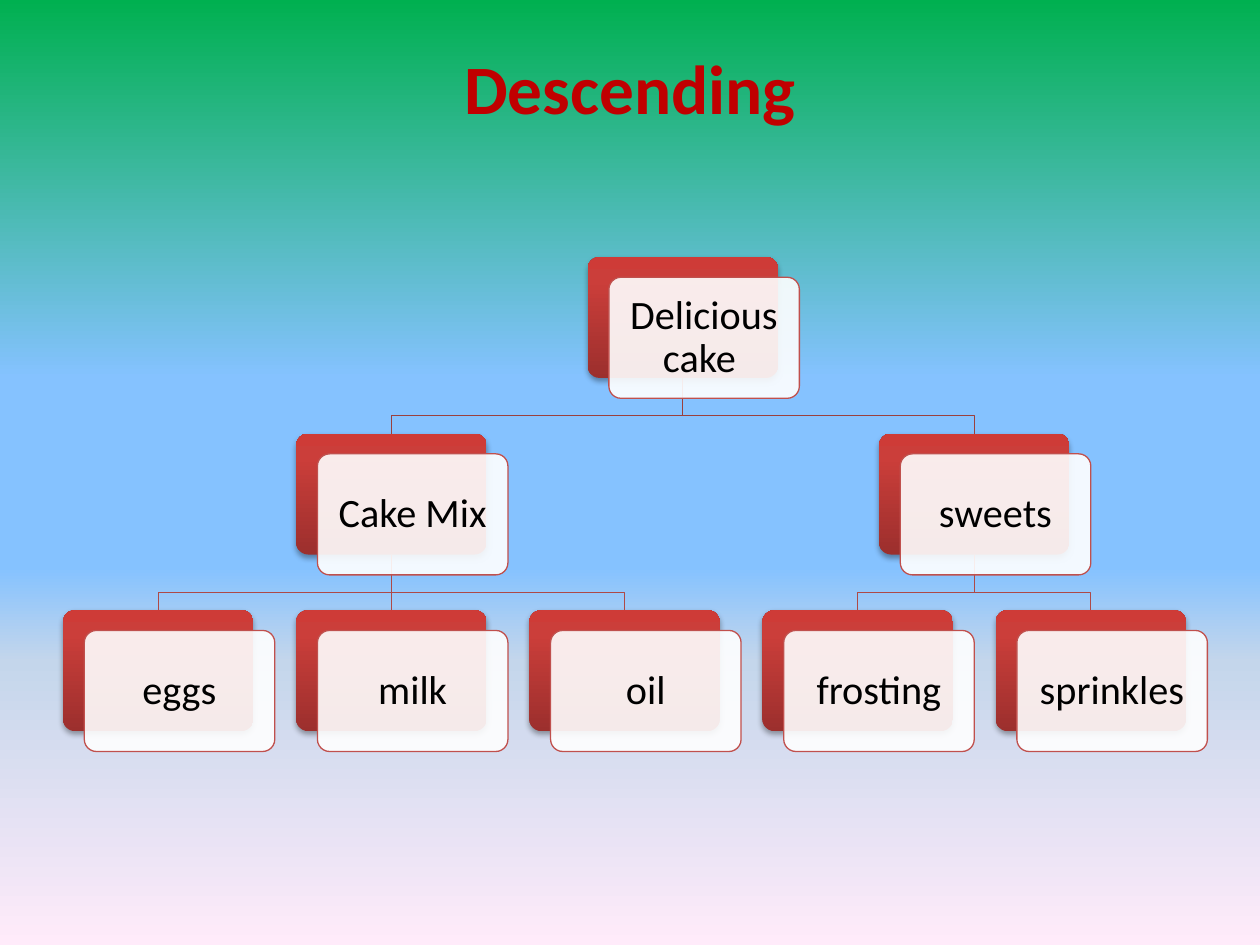
import pptx
import pptx.util
import pptx.dml.color
import pptx.enum.shapes
import pptx.enum.text
import pptx.oxml
import pptx.oxml.ns
from pptx.util import Cm

CARD_W, CARD_H = Cm(3.84), Cm(2.44)
LEFT, TOP = Cm(1.27), Cm(5.18)
COLUMN_STEP, LEVEL_STEP = Cm(4.7), Cm(3.56)
FRONT_DX, FRONT_DY = Cm(0.43), Cm(0.41)
BEND = Cm(0.76)

SKY = [(0, "00B050"), (40, "85C2FF"), (60, "85C2FF"), (70, "C4D6EB"), (100, "FFEBFA")]
RED = [(0, "9C2F2D"), (80, "CB3E3A"), (100, "CE3B37")]
LINK_COLORS = ["9A403E", "AE4946"]

# name: (text, column, level, parent)
NODES = {
    "cake": ("Delicious cake ", 2.25, 0, None),
    "mix": ("Cake Mix ", 1, 1, "cake"),
    "sweets": ("sweets", 3.5, 1, "cake"),
    "eggs": ("eggs", 0, 2, "mix"),
    "milk": ("milk", 1, 2, "mix"),
    "oil": ("oil", 2, 2, "mix"),
    "frosting": ("frosting", 3, 2, "sweets"),
    "sprinkles": ("sprinkles", 4, 2, "sweets"),
}


def rgb(value):
    """Return the colour for a hex string."""
    return pptx.dml.color.RGBColor.from_string(value)


def add_xml(parent, tag, **attrs):
    """Append a DrawingML element to a parent and return it."""
    child = pptx.oxml.parse_xml(f"<a:{tag} {pptx.oxml.ns.nsdecls('a')}/>")
    for name, value in attrs.items():
        child.set(name, str(value))
    parent.append(child)
    return child


def find(element, tag):
    """Return the first descendant with the given prefixed tag."""
    return element.find(".//" + pptx.oxml.ns.qn(tag))


def set_gradient(fill, element, stops, angle):
    """Fill with a linear gradient of any number of stops."""
    fill.gradient()
    fill.gradient_angle = angle
    stop_list = find(element, "a:gsLst")
    for old in list(stop_list):
        stop_list.remove(old)
    for position, color in stops:
        stop = add_xml(stop_list, "gs", pos=position * 1000)
        add_xml(stop, "srgbClr", val=color)


def format_text(p, size, color, bold=False):
    """Centre a paragraph and format its runs."""
    p.alignment = pptx.enum.text.PP_ALIGN.CENTER
    for r in p.runs:
        r.font.name = "Calibri"
        r.font.size = pptx.util.Pt(size)
        r.font.bold = bold
        r.font.color.rgb = rgb(color)


def set_title(s, text):
    """Place and format the slide title."""
    sp = s.shapes.title
    sp.left, sp.top, sp.width, sp.height = Cm(1.27), Cm(0.76), Cm(22.86), Cm(1.98)
    tf = sp.text_frame
    tf.text = text
    tf.vertical_anchor = pptx.enum.text.MSO_ANCHOR.MIDDLE
    format_text(tf.paragraphs[0], 39.6, "C00000", True)


def add_card(s, left, top):
    """Add a rounded card without shadow."""
    kind = pptx.enum.shapes.MSO_SHAPE.ROUNDED_RECTANGLE
    sp = s.shapes.add_shape(kind, left, top, CARD_W, CARD_H)
    sp.adjustments[0] = 0.1
    sp.shadow.inherit = False
    return sp


def add_back(s, column, level):
    """Add the red card with its soft shadow."""
    sp = add_card(s, LEFT + int(column * COLUMN_STEP), TOP + level * LEVEL_STEP)
    set_gradient(sp.fill, sp.element, RED, 90)
    sp.line.fill.background()
    shadow = add_xml(find(sp.element, "a:effectLst"), "outerShdw", blurRad=40000,
                     dist=23000, dir=5400000, rotWithShape=0)
    add_xml(add_xml(shadow, "srgbClr", val="000000"), "alpha", val=35000)
    return sp


def add_front(s, back, text):
    """Add the translucent white label card over a red card."""
    sp = add_card(s, back.left + FRONT_DX, back.top + FRONT_DY)
    sp.fill.solid()
    sp.fill.fore_color.rgb = rgb("FFFFFF")
    add_xml(find(sp.element, "a:srgbClr"), "alpha", val=90000)
    sp.line.color.rgb = rgb("C0504D")
    sp.line.width = pptx.util.Pt(0.75)
    tf = sp.text_frame
    tf.text = text
    tf.word_wrap = True
    tf.vertical_anchor = pptx.enum.text.MSO_ANCHOR.MIDDLE
    tf.margin_left = tf.margin_right = tf.margin_top = tf.margin_bottom = Cm(0.33)
    p = tf.paragraphs[0]
    p.line_spacing = 0.9
    format_text(p, 23, "000000")


def add_link(s, parent, child, color):
    """Join a parent card to a child, straight or with an elbow."""
    x1, y1 = parent.left + CARD_W // 2, parent.top + CARD_H
    x2, y2 = child.left + CARD_W // 2, child.top
    if x1 == x2:
        sp = s.shapes.add_connector(pptx.enum.shapes.MSO_CONNECTOR.STRAIGHT, x1, y1, x2, y2)
        sp.begin_connect(parent, 2)
        sp.end_connect(child, 0)
        add_xml(find(sp.element, "p:spPr"), "effectLst")
    else:
        builder = s.shapes.build_freeform(x1, y1)
        builder.add_line_segments([(x1, y1 + BEND), (x2, y1 + BEND), (x2, y2)], close=False)
        sp = builder.convert_to_shape()
        sp.fill.background()
        sp.shadow.inherit = False
    sp.line.color.rgb = rgb(color)
    sp.line.width = pptx.util.Pt(0.75)


def main():
    """Build the cake hierarchy slide."""
    prs = pptx.Presentation()
    prs.slide_width, prs.slide_height = Cm(25.4), Cm(19.05)
    s = prs.slides.add_slide(prs.slide_layouts[5])
    set_gradient(s.background.fill, s.element, SKY, 270)
    set_title(s, "Descending")
    backs = {name: add_back(s, column, level)
             for name, (_, column, level, _) in NODES.items()}
    for name, (_, _, level, parent) in NODES.items():
        if parent:
            add_link(s, backs[parent], backs[name], LINK_COLORS[level - 1])
    for name, (text, *_) in NODES.items():
        add_front(s, backs[name], text)
    prs.save("out.pptx")


if __name__ == "__main__":
    main()
